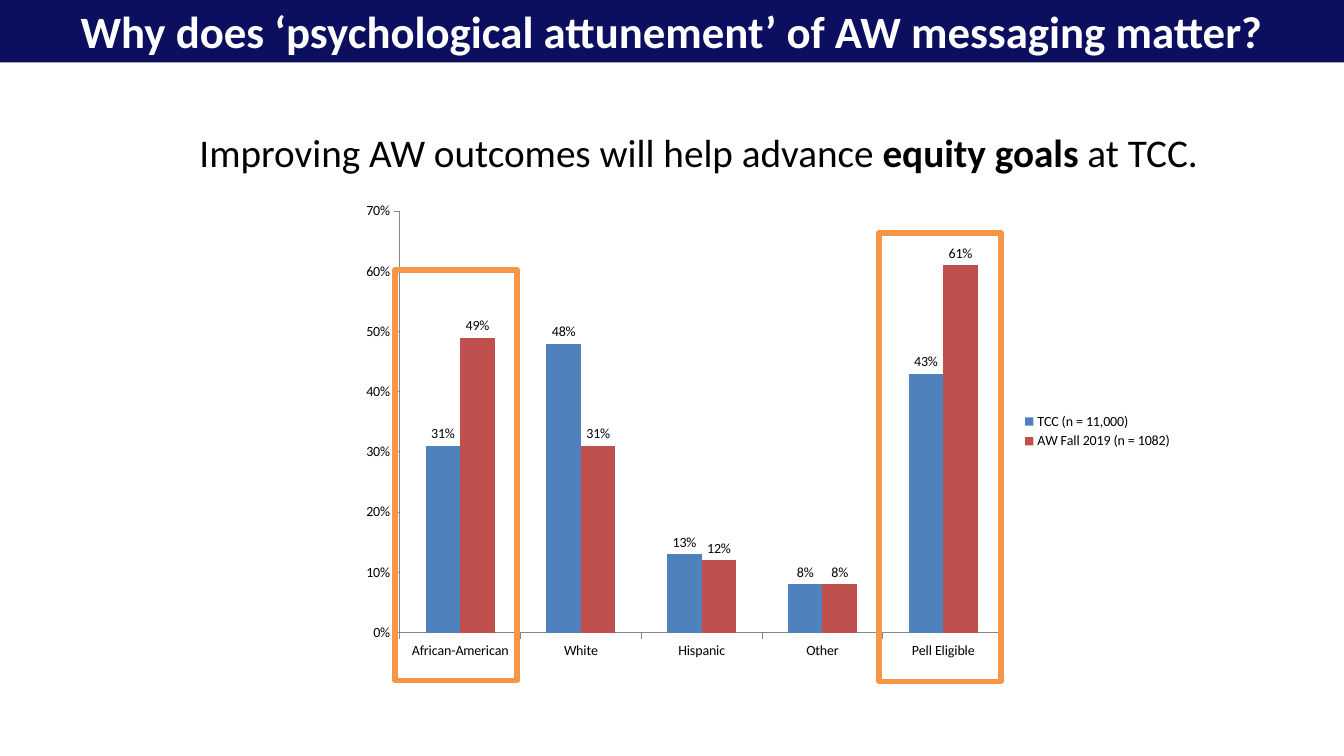
import lxml.etree
import pptx
import pptx.chart.data
import pptx.dml.color
import pptx.enum.chart
import pptx.enum.shapes
import pptx.enum.text
import pptx.oxml
import pptx.oxml.ns
import pptx.util

Inches = pptx.util.Inches
FONT = "Calibri"
BLACK, WHITE, NAVY, ORANGE, GRAY = "000000", "FFFFFF", "0C0E60", "F79646", "868686"
CATEGORIES = ["African-American", "White", "Hispanic", "Other", "Pell Eligible"]
SERIES = [
    ("TCC (n = 11,000)", "4F81BD", [0.31, 0.48, 0.13, 0.08, 0.43]),
    ("AW Fall 2019 (n = 1082)", "C0504D", [0.49, 0.31, 0.12, 0.08, 0.61]),
]
PLOT_LAYOUT = {"x": 0.06, "y": 0.035, "w": 0.725, "h": 0.89}


def color(value):
    """Turn a hex string into a colour."""
    return pptx.dml.color.RGBColor.from_string(value)


def style_font(font, size, fill, **formats):
    """Apply the deck font and extra format values."""
    for name, value in {"name": FONT, "size": pptx.util.Pt(size), **formats}.items():
        setattr(font, name, value)
    font.color.rgb = color(fill)


def write_line(shape, spans, size, fill, **formats):
    """Write one paragraph of (text, bold) spans into a shape."""
    frame = shape.text_frame
    for name, value in {"word_wrap": True, **formats}.items():
        setattr(frame, name, value)
    para = frame.paragraphs[0]
    for text, bold in spans:
        span = para.add_run()
        span.text = text
        style_font(span.font, size, fill, bold=bold)
    return para


def add_rectangle(page, box):
    """Add a plain rectangle without a shadow."""
    rectangle = page.shapes.add_shape(
        pptx.enum.shapes.MSO_SHAPE.RECTANGLE, *map(Inches, box))
    rectangle.shadow.inherit = False
    return rectangle


def add_title_band(page, box, text):
    """Add the filled band with the centred title."""
    band = add_rectangle(page, box)
    band.fill.solid()
    band.fill.fore_color.rgb = color(NAVY)
    band.line.fill.background()
    para = write_line(band, [(text, True)], 32, WHITE,
                      vertical_anchor=pptx.enum.text.MSO_ANCHOR.MIDDLE)
    para.alignment = pptx.enum.text.PP_ALIGN.CENTER


def add_statement(page, box, spans):
    """Add the sentence above the chart."""
    write_line(page.shapes.add_textbox(*map(Inches, box)), spans, 28, BLACK)


def add_highlight(page, box):
    """Add an orange frame around one category."""
    frame = add_rectangle(page, box)
    frame.fill.background()
    frame.line.color.rgb = color(ORANGE)
    frame.line.width = pptx.util.Pt(4)


def set_plot_layout(chart):
    """Fix the inner plot area within the chart."""
    plot_area = chart.element.find(".//" + pptx.oxml.ns.qn("c:plotArea"))
    for old_layout in plot_area.findall(pptx.oxml.ns.qn("c:layout")):
        plot_area.remove(old_layout)
    layout = lxml.etree.Element(pptx.oxml.ns.qn("c:layout"))
    manual = lxml.etree.SubElement(layout, pptx.oxml.ns.qn("c:manualLayout"))
    values = {"layoutTarget": "inner", "xMode": "edge", "yMode": "edge", **PLOT_LAYOUT}
    for name, value in values.items():
        lxml.etree.SubElement(manual, pptx.oxml.ns.qn("c:" + name), val=str(value))
    plot_area.insert(0, layout)


def add_enrollment_chart(page, box):
    """Add the clustered columns with labels and a legend."""
    data = pptx.chart.data.CategoryChartData(number_format="0%")
    data.categories = CATEGORIES
    for name, _, values in SERIES:
        data.add_series(name, values)
    chart = page.shapes.add_chart(
        pptx.enum.chart.XL_CHART_TYPE.COLUMN_CLUSTERED, *map(Inches, box), data).chart
    style_font(chart.font, 10, BLACK)
    chart.has_title = False
    chart.has_legend = True
    chart.legend.position = pptx.enum.chart.XL_LEGEND_POSITION.RIGHT
    chart.legend.include_in_layout = False
    plot = chart.plots[0]
    for name, value in {"gap_width": 150, "overlap": 0, "vary_by_categories": False}.items():
        setattr(plot, name, value)
    for series, (_, fill, _) in zip(plot.series, SERIES):
        series.format.fill.solid()
        series.format.fill.fore_color.rgb = color(fill)
        labels = {"show_value": True, "number_format": "0%",
                  "number_format_is_linked": False,
                  "position": pptx.enum.chart.XL_LABEL_POSITION.OUTSIDE_END}
        for name, value in labels.items():
            setattr(series.data_labels, name, value)
    for axis in (chart.category_axis, chart.value_axis):
        axis.has_major_gridlines = False
        axis.major_tick_mark = pptx.enum.chart.XL_TICK_MARK.OUTSIDE
        axis.format.line.color.rgb = color(GRAY)
        axis.format.line.width = pptx.util.Pt(0.75)
    scale = {"minimum_scale": 0, "maximum_scale": 0.7, "major_unit": 0.1}
    for name, value in scale.items():
        setattr(chart.value_axis, name, value)
    labels = chart.value_axis.tick_labels
    labels.number_format = "0%"
    labels.number_format_is_linked = False
    set_plot_layout(chart)


def main():
    """Build the slide and save the deck."""
    deck = pptx.Presentation()
    deck.slide_width, deck.slide_height = Inches(13.33), Inches(7.5)
    page = deck.slides.add_slide(deck.slide_layouts[6])
    add_statement(page, (1.88, 1.22, 11.26, 2.93), [
        ("Improving AW outcomes will help advance ", False),
        ("equity goals ", True),
        ("at TCC.", False),
    ])
    add_enrollment_chart(page, (3.47, 1.93, 8.26, 4.7))
    for left, top, height in ((3.92, 2.68, 4.07), (8.72, 2.31, 4.45)):
        add_highlight(page, (left, top, 1.21, height))
    add_title_band(page, (0, -0.02, 13.33, 0.64),
                   "Why does ‘psychological attunement’ of AW messaging matter?")
    deck.save("out.pptx")


if __name__ == "__main__":
    main()
